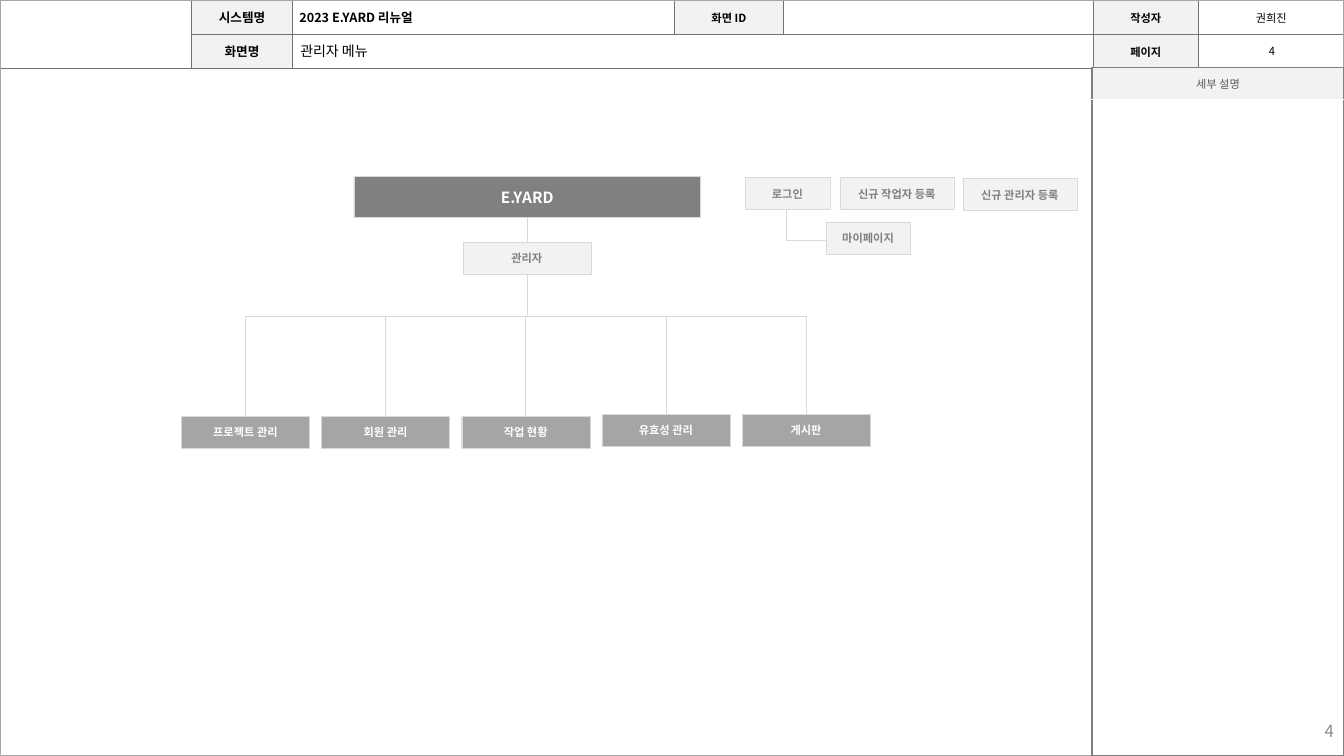
from dataclasses import dataclass

from lxml.etree import SubElement
from pptx import Presentation
from pptx.dml.color import RGBColor
from pptx.enum.shapes import MSO_CONNECTOR, MSO_SHAPE
from pptx.enum.text import MSO_ANCHOR, PP_ALIGN
from pptx.oxml.ns import qn
from pptx.util import Inches, Pt


@dataclass(frozen=True)
class Theme:
    font: str = "Noto Sans CJK KR"
    black: str = "000000"
    white: str = "FFFFFF"
    pale: str = "F2F2F2"
    mid: str = "A5A5A5"
    dark: str = "808080"
    frame: str = "A6A6A6"
    rule: str = "767171"
    link: str = "D9D9D9"
    caption: str = "595959"
    number: str = "8C8C8C"
    small: float = 8
    label: float = 9
    body: float = 10
    title: float = 11
    page: float = 12


T = Theme()


@dataclass(frozen=True)
class Box:
    text: str
    left: float
    top: float
    width: float
    height: float = 0.32
    fill: str = T.pale
    color: str = T.dark
    size: float = T.small


@dataclass(frozen=True)
class Label:
    text: str
    left: float
    top: float
    width: float
    height: float
    size: float
    color: str
    align: PP_ALIGN
    margins: tuple = (0.1, 0.05)


@dataclass(frozen=True)
class Entry:
    row: int
    col: int
    text: str
    size: float = T.small
    bold: bool = True
    fill: str | None = T.pale
    color: str = T.black
    align: PP_ALIGN = PP_ALIGN.CENTER
    indent: float = 0.05


BRANCH_NAMES = ("프로젝트 관리", "회원 관리", "작업 현황", "유효성 관리", "게시판")
BRANCH_LEFT, BRANCH_PITCH, BUS_Y = 1.8, 1.39, 3.14
BRANCHES = [
    Box(name, BRANCH_LEFT + i * BRANCH_PITCH, 4.13 if i < 3 else 4.11, 1.27,
        fill=T.mid, color=T.white)
    for i, name in enumerate(BRANCH_NAMES)
]
ROOT = Box("E.YARD", 3.51, 1.75, 3.44, 0.41, T.dark, T.white, T.title)
ADMIN = Box("관리자", 4.59, 2.4, 1.27)
SIDE_BOXES = [
    Box("로그인", 7.39, 1.76, 0.84),
    Box("신규 작업자 등록", 8.33, 1.76, 1.13),
    Box("신규 관리자 등록", 9.55, 1.77, 1.13),
    Box("마이페이지", 8.19, 2.2, 0.84),
]
HEADER = [
    Entry(0, 1, "시스템명", T.label),
    Entry(0, 2, "2023 E.YARD 리뉴얼", T.label, fill=None, align=PP_ALIGN.LEFT, indent=0.07),
    Entry(0, 3, "화면 ID"),
    Entry(0, 5, "작성자"),
    Entry(0, 6, "권희진", bold=False, fill=None),
    Entry(1, 1, "화면명", T.label),
    Entry(1, 5, "페이지"),
]
LABELS = [
    Label("4", 12.48, 0.43, 0.27, 0.16, T.small, T.black, PP_ALIGN.CENTER, (0.04, 0.02)),
    Label("4", 10.33, 7.15, 3, 0.2, T.page, T.number, PP_ALIGN.RIGHT),
    Label("관리자 메뉴", 2.88, 0.36, 6.28, 0.3, T.body, T.black, PP_ALIGN.LEFT),
]


def write(tf, text: str, size: float, color: str, align: PP_ALIGN, bold: bool = False) -> None:
    p = tf.paragraphs[0]
    p.alignment = align
    r = p.add_run()
    r.text = text
    for name, value in {"size": Pt(size), "bold": bold, "name": T.font}.items():
        setattr(r.font, name, value)
    r.font.color.rgb = RGBColor.from_string(color)
    SubElement(r.font._element, qn("a:ea"), typeface=T.font)


def add_box(shapes, box: Box):
    sp = shapes.add_shape(MSO_SHAPE.RECTANGLE, *map(Inches, (box.left, box.top, box.width, box.height)))
    sp.shadow.inherit = False
    sp.fill.solid()
    sp.fill.fore_color.rgb = RGBColor.from_string(box.fill)
    sp.line.color.rgb = RGBColor.from_string(T.link)
    sp.line.width = Pt(0.25)
    sp.text_frame.vertical_anchor = MSO_ANCHOR.MIDDLE
    write(sp.text_frame, box.text, box.size, box.color, PP_ALIGN.CENTER, True)
    return sp


def add_label(shapes, label: Label) -> None:
    tf = shapes.add_textbox(*map(Inches, (label.left, label.top, label.width, label.height))).text_frame
    side, edge = map(Inches, label.margins)
    style = {"word_wrap": True, "vertical_anchor": MSO_ANCHOR.MIDDLE, "margin_left": side,
             "margin_right": side, "margin_top": edge, "margin_bottom": edge}
    for name, value in style.items():
        setattr(tf, name, value)
    write(tf, label.text, label.size, label.color, label.align)


def add_elbow(shapes, x1: float, y1: float, x2: float, y2: float, bend: float):
    """Add a bent line; bend is the turning point as a share of its run."""
    cx = shapes.add_connector(MSO_CONNECTOR.ELBOW, *map(Inches, (x1, y1, x2, y2)))
    cx.line.color.rgb = RGBColor.from_string(T.link)
    cx.line.width = Pt(0.5)
    sp_pr = cx._element.spPr
    SubElement(sp_pr, qn("a:effectLst"))
    guides = sp_pr.find(qn("a:prstGeom")).get_or_add_avLst()
    SubElement(guides, qn("a:gd"), name="adj1", fmla=f"val {round(bend * 100000)}")
    return cx


def add_branch_link(shapes, parent, child) -> None:
    """Join two boxes with a line that leaves downwards and turns at the bus."""
    x1, y1 = parent.left + parent.width // 2, parent.top + parent.height
    x2, y2 = child.left + child.width // 2, child.top
    cx = add_elbow(shapes, 0, 0, 1, 1, (Inches(BUS_Y) - y1) / (y2 - y1))
    cx.begin_connect(parent, 2)
    cx.end_connect(child, 0)
    drop, shift = y2 - y1, abs(x2 - x1)
    cx.left, cx.top = (x1 + x2 - drop) // 2, (y1 + y2 - shift) // 2
    cx.width, cx.height = drop, shift
    xfrm = cx._element.spPr.find(qn("a:xfrm"))
    for flip in ("flipH", "flipV"):
        xfrm.attrib.pop(flip, None)
    xfrm.set("rot", "5400000")
    if x2 > x1:
        xfrm.set("flipV", "1")


def add_grid(shapes, left: float, top: float, cols: list[float], rows: list[float]):
    table = shapes.add_table(len(rows), len(cols), *map(Inches, (left, top, sum(cols), sum(rows)))).table
    table.first_row = table.horz_banding = False
    for col, width in zip(table.columns, cols):
        col.width = Inches(width)
    for row, height in zip(table.rows, rows):
        row.height = Inches(height)
    return table


def style_cells(table, entries: list[Entry], sides: list[str], color: str, width: float) -> None:
    """Fill in a table; sides lists the bordered edges of each row's cells."""
    found = {(e.row, e.col): e for e in entries}
    for i, row in enumerate(table.rows):
        for j, cell in enumerate(row.cells):
            entry = found.get((i, j), Entry(i, j, "", fill=None))
            style = {"vertical_anchor": MSO_ANCHOR.MIDDLE, "margin_left": Inches(entry.indent),
                     "margin_right": Inches(0.05), "margin_top": Inches(0.02),
                     "margin_bottom": Inches(0.02)}
            for name, value in style.items():
                setattr(cell, name, value)
            for side in sides[i]:
                ln = SubElement(cell._tc.tcPr, qn(f"a:ln{side}"), w=str(Pt(width)))
                SubElement(SubElement(ln, qn("a:solidFill")), qn("a:srgbClr"), val=color)
            if entry.fill:
                cell.fill.solid()
                cell.fill.fore_color.rgb = RGBColor.from_string(entry.fill)
            else:
                cell.fill.background()
            if entry.text:
                write(cell.text_frame, entry.text, entry.size, entry.color, entry.align, entry.bold)
            else:
                SubElement(cell.text_frame.paragraphs[0]._p, qn("a:endParaRPr"), sz=str(Pt(T.small).centipoints))


def main() -> None:
    prs = Presentation()
    prs.slide_width, prs.slide_height = Inches(13.33), Inches(7.5)
    shapes = prs.slides.add_slide(prs.slide_layouts[6]).shapes

    header = add_grid(shapes, 0, 0, [1.9, 1, 3.79, 1.08, 3.07, 1.05, 1.44], [0.34, 0.34])
    header.cell(0, 0).merge(header.cell(1, 0))
    header.cell(1, 2).merge(header.cell(1, 4))
    style_cells(header, HEADER, ["LRTB", "LRTB"], T.rule, 0.5)

    frame = shapes.add_shape(MSO_SHAPE.RECTANGLE, 0, 0, prs.slide_width, prs.slide_height)
    frame.shadow.inherit = False
    frame.fill.background()
    frame.line.color.rgb = RGBColor.from_string(T.frame)
    frame.line.width = Pt(1.3)

    details = add_grid(shapes, 10.83, 0.67, [2.5], [0.32, 6.51])
    style_cells(details, [Entry(0, 0, "세부 설명", bold=False, color=T.caption)],
                ["LRT", "LRB"], T.dark, 1)

    add_elbow(shapes, 7.84, 2.07, 8.22, 2.38, -0.1)
    for box in SIDE_BOXES:
        add_box(shapes, box)
    root = add_box(shapes, ROOT)
    for branch in BRANCHES:
        add_branch_link(shapes, root, add_box(shapes, branch))
    add_box(shapes, ADMIN)
    for label in LABELS:
        add_label(shapes, label)
    prs.save("out.pptx")


if __name__ == "__main__":
    main()
